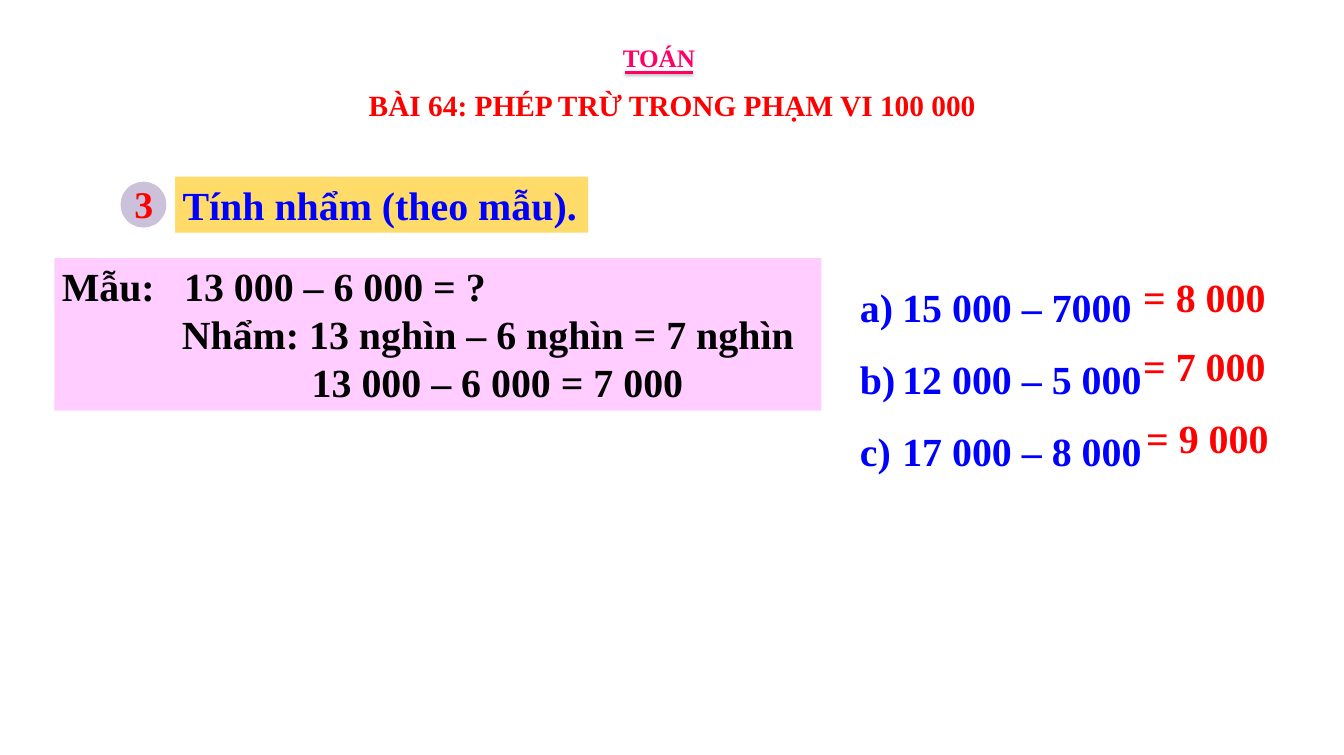
from lxml import etree
from pptx import Presentation
from pptx.dml.color import RGBColor
from pptx.enum.shapes import MSO_CONNECTOR, MSO_SHAPE
from pptx.enum.text import MSO_ANCHOR, MSO_AUTO_SIZE, PP_ALIGN
from pptx.oxml.ns import qn
from pptx.util import Inches, Pt

STRAIGHT = MSO_CONNECTOR.STRAIGHT
OVAL = MSO_SHAPE.OVAL
TOP = MSO_ANCHOR.TOP
NO_AUTOFIT = MSO_AUTO_SIZE.NONE
LEFT, CENTER = PP_ALIGN.LEFT, PP_ALIGN.CENTER

# Content
SUBJECT = "TOÁN"
LESSON = "BÀI 64: PHÉP TRỪ TRONG PHẠM VI 100 000"
TASK_NUMBER = "3"
TASK = "Tính nhẩm (theo mẫu)."
# Each line of the worked example with its tab stop in inches
EXAMPLE = [
    ("Mẫu:\t13 000 – 6 000 = ?", 1.62),
    ("\tNhẩm: 13 nghìn – 6 nghìn = 7 nghìn", 1.59),
    ("\t13 000 – 6 000 = 7 000", 3.31),
]
EXERCISES = ["15 000 – 7000", "12 000 – 5 000", "17 000 – 8 000"]
# Each answer with its left and top in inches
ANSWERS = [
    ("= 8 000", 14.98, 3.53),
    ("= 7 000", 14.98, 4.45),
    ("= 9 000", 15.02, 5.4),
]

THEME = {
    "font": "Times New Roman",
    "subject": "FF0066", "red": "FF0000", "blue": "0000FF", "black": "000000",
    "badge": "CCC1DA", "task_fill": "FFDB69", "example_fill": "FFCDFF",
    "subject_size": 24, "lesson_size": 28, "badge_size": 36, "body_size": 38,
}
NARROW_INSETS = (0.1, 0.05)
WIDE_INSETS = (0.16, 0.08)


def color(name):
    return RGBColor.from_string(THEME[name])


def add_element(parent, tag, **attributes):
    return etree.SubElement(parent, qn(tag), attributes)


def write(shape, lines, size, ink, insets=NARROW_INSETS, align=LEFT,
          wrap=True, spacing=None, decorate=None):
    """Fill a shape with uniformly styled paragraphs."""
    frame = shape.text_frame
    frame.text = "\n".join(lines)
    frame.word_wrap = wrap
    frame.auto_size = NO_AUTOFIT
    frame.vertical_anchor = TOP
    frame.margin_left = frame.margin_right = Inches(insets[0])
    frame.margin_top = frame.margin_bottom = Inches(insets[1])
    for index, paragraph in enumerate(frame.paragraphs):
        paragraph.alignment = align
        paragraph.space_before = Pt(0)
        if spacing:
            paragraph.line_spacing = spacing
        if decorate:
            decorate(paragraph, index)
        font = paragraph.font
        font.name = THEME["font"]
        font.size = Pt(THEME[size])
        font.bold = True
        font.color.rgb = color(ink)


def add_text(box, lines, size, ink, fill=None, **options):
    text_box = slide.shapes.add_textbox(*map(Inches, box))
    if fill:
        text_box.fill.solid()
        text_box.fill.fore_color.rgb = color(fill)
    write(text_box, lines, size, ink, **options)


def place(shape, box):
    shape.left, shape.top, shape.width, shape.height = map(Inches, box)


def set_tab(paragraph, index):
    tabs = add_element(paragraph._p.get_or_add_pPr(), "a:tabLst")
    add_element(tabs, "a:tab", pos=str(Inches(EXAMPLE[index][1])), algn="l")


def set_letter(paragraph, index):
    properties = paragraph._p.get_or_add_pPr()
    properties.set("marL", str(Inches(0.56)))
    properties.set("indent", str(Inches(-0.56)))
    add_element(properties, "a:buFont", typeface="+mj-lt")
    add_element(properties, "a:buAutoNum", type="alphaLcParenR")


presentation = Presentation()
presentation.slide_width = Inches(17.8)
presentation.slide_height = Inches(10)
slide = presentation.slides.add_slide(presentation.slide_layouts[1])

# Subject with its shadowed underline
add_text((8.15, 0.51, 1.17, 0.5), [SUBJECT], "subject_size", "subject", wrap=False)
underline = slide.shapes.add_connector(
    STRAIGHT, Inches(8.28), Inches(0.96), Inches(9.18), Inches(0.96))
underline.line.color.rgb = color("subject")
underline.line.width = Pt(2)
effects = add_element(underline._element.spPr, "a:effectLst")
shadow = add_element(effects, "a:outerShdw", blurRad=str(Pt(3.1)),
                     dist=str(Pt(1.6)), dir="5400000", rotWithShape="0")
shadow_color = add_element(shadow, "a:srgbClr", val=THEME["black"])
add_element(shadow_color, "a:alpha", val="38000")

# Lesson title
lesson = slide.shapes.title
place(lesson, (4.19, 1.07, 9.42, 0.63))
write(lesson, [LESSON], "lesson_size", "red", insets=WIDE_INSETS, align=CENTER)

# Task number and heading
badge = slide.shapes.add_shape(OVAL, *map(Inches, (1.61, 2.42, 0.58, 0.58)))
badge.shadow.inherit = False
badge.fill.solid()
badge.fill.fore_color.rgb = color("badge")
badge.line.color.rgb = color("badge")
badge.line.width = Pt(2)
add_text((1.68, 2.34, 0.45, 0.71), [TASK_NUMBER], "badge_size", "red", wrap=False)
add_text((2.32, 2.34, 5.47, 0.74), [TASK], "body_size", "blue",
         fill="task_fill", wrap=False)

# Worked example
add_text((0.72, 3.42, 10.16, 2.02), [line for line, _ in EXAMPLE],
         "body_size", "black", fill="example_fill", decorate=set_tab)

# Exercises and their answers
exercises = slide.placeholders[1]
place(exercises, (11.23, 3.35, 4.25, 2.92))
write(exercises, EXERCISES, "body_size", "blue", insets=WIDE_INSETS,
      spacing=1.5, decorate=set_letter)
for answer, left, top in ANSWERS:
    add_text((left, top, 2.29, 0.8), [answer], "body_size", "red", insets=WIDE_INSETS)

presentation.save("out.pptx")
